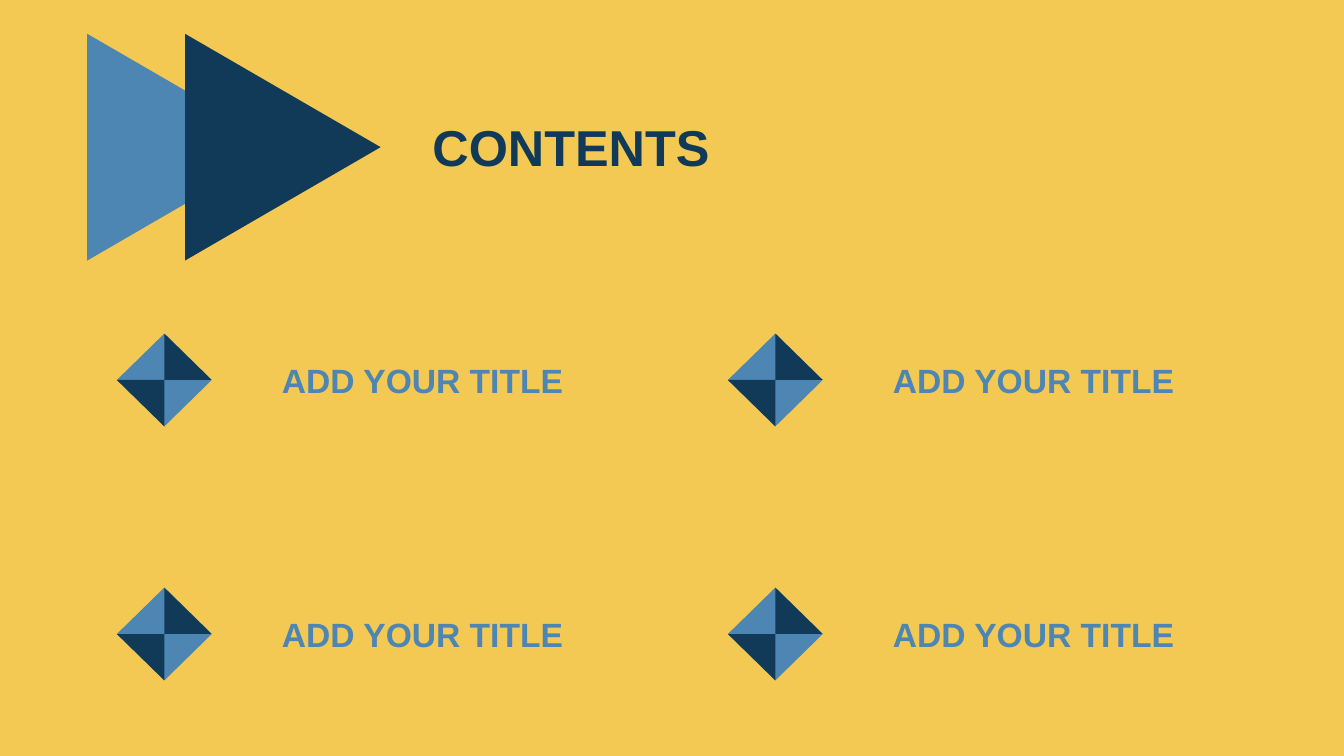
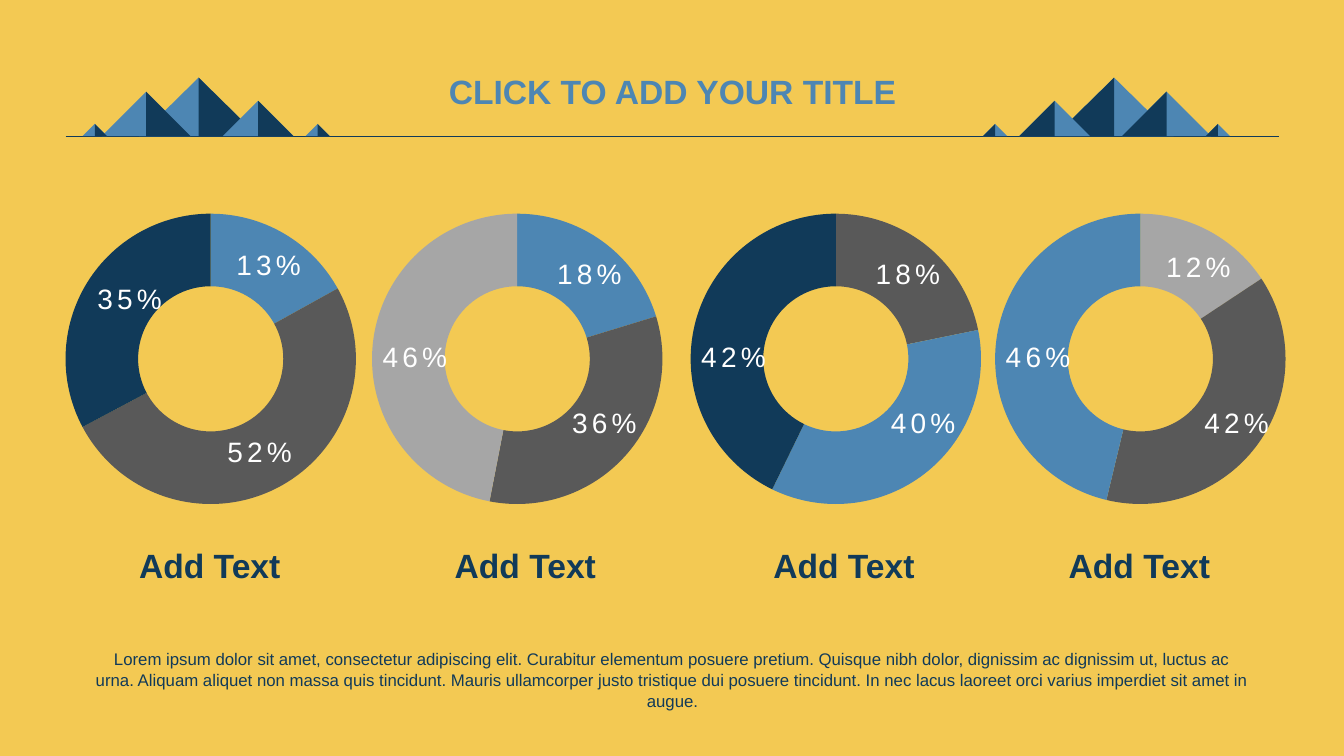
from itertools import product

from lxml.etree import SubElement
from pptx import Presentation
from pptx.dml.color import RGBColor
from pptx.enum.shapes import MSO_CONNECTOR, MSO_SHAPE
from pptx.enum.text import MSO_ANCHOR, PP_ALIGN
from pptx.oxml.ns import qn
from pptx.util import Inches, Pt

COLORS = {
    "background": "F3C953",
    "blue": "4D86B3",
    "navy": "113A59",
    "charcoal": "595959",
    "silver": "A6A6A6",
    "white": "FFFFFF",
}
FONT = "Arial"
WIDTH, HEIGHT = 13.33, 7.5
RING_RADIUS = 1.44
RING_THICKNESS = 0.25
LOREM = (
    "Lorem ipsum dolor sit amet, consectetur adipiscing elit. Curabitur elementum "
    "posuere pretium. Quisque nibh dolor, dignissim ac dignissim ut, luctus ac urna. "
    "Aliquam aliquet non massa quis tincidunt. Mauris ullamcorper justo tristique dui "
    "posuere tincidunt. In nec lacus laoreet orci varius imperdiet sit amet in augue."
)

# Each mountain: offset from the range's middle, half width, height.
MOUNTAINS = [
    (0, 0.59, 0.58),
    (0.59, 0.35, 0.35),
    (-0.52, 0.44, 0.44),
    (1.18, 0.12, 0.12),
    (-1.03, 0.12, 0.12),
]

# Each ring: centre, caption offset, then segments of
# label, colour, end angle and label offset from the centre.
RINGS = [
    (2.09, 0, [
        ("13%", "blue", 61, (0.57, -0.93)),
        ("52%", "charcoal", 242, (0.48, 0.92)),
        ("35%", "navy", 360, (-0.81, -0.6)),
    ]),
    (5.13, 0.09, [
        ("18%", "blue", 73, (0.71, -0.84)),
        ("36%", "charcoal", 191, (0.86, 0.63)),
        ("46%", "silver", 360, (-1.02, -0.02)),
    ]),
    (8.29, 0.09, [
        ("18%", "charcoal", 78.5, (0.71, -0.84)),
        ("40%", "blue", 206, (0.86, 0.63)),
        ("42%", "navy", 360, (-1.02, -0.02)),
    ]),
    (11.31, 0, [
        ("12%", "silver", 56.5, (0.57, -0.91)),
        ("42%", "charcoal", 193.5, (0.95, 0.63)),
        ("46%", "blue", 360, (-1.02, -0.02)),
    ]),
]


def color(name):
    """Return the named theme colour."""
    return RGBColor.from_string(COLORS[name])


def paint(shape, fill):
    """Give a shape a plain fill without outline or shadow."""
    shape.shadow.inherit = False
    shape.fill.solid()
    shape.fill.fore_color.rgb = color(fill)
    shape.line.fill.background()


def add_preset(shapes, preset, left, top, width, height, fill):
    """Add a painted preset shape."""
    shape = shapes.add_shape(
        preset, Inches(left), Inches(top), Inches(width), Inches(height))
    paint(shape, fill)
    return shape


def add_text(slide, text, left, top, width, height, size, fill,
             bold=False, align=PP_ALIGN.CENTER, wrap=False, spacing=0):
    """Add a one-paragraph text box and return its paragraph."""
    box = slide.shapes.add_textbox(
        Inches(left), Inches(top), Inches(width), Inches(height))
    frame = box.text_frame
    frame.word_wrap = wrap
    frame.vertical_anchor = MSO_ANCHOR.TOP
    paragraph = frame.paragraphs[0]
    paragraph.text = text
    paragraph.alignment = align
    font = paragraph.font
    font.name, font.size, font.bold = FONT, Pt(size), bold
    font.color.rgb = color(fill)
    if spacing:
        paragraph.runs[0]._r.get_or_add_rPr().set("spc", str(spacing * 100))
    return paragraph


def add_heading(slide, text, left, center, width):
    """Add a blue heading centred on a height."""
    add_text(slide, text, left, center - 0.25, width, 0.5, 24, "blue", bold=True)


def add_peak(shapes, center, tip, base, half_width, dark_side):
    """Draw a blue triangle with one navy half; dark_side is -1 or 1."""
    triangle = add_preset(
        shapes, MSO_SHAPE.ISOSCELES_TRIANGLE, center - half_width,
        min(tip, base), 2 * half_width, abs(base - tip), "blue")
    if tip > base:
        triangle.rotation = 180
    builder = shapes.build_freeform(Inches(center), Inches(tip))
    builder.add_line_segments([
        (Inches(center), Inches(base)),
        (Inches(center + dark_side * half_width), Inches(base)),
    ])
    paint(builder.convert_to_shape(), "navy")


def add_diamond(slide, center, middle, half_width=0.47, half_height=0.46):
    """Draw a four-part diamond from two opposite peaks."""
    shapes = slide.shapes.add_group_shape().shapes
    for direction in (1, -1):
        add_peak(shapes, center, middle - direction * half_height, middle,
                 half_width, direction)


def add_mountain_range(slide, center, base, direction):
    """Draw a group of mountains, mirrored when direction is -1."""
    shapes = slide.shapes.add_group_shape().shapes
    for offset, half_width, height in MOUNTAINS:
        add_peak(shapes, center + direction * offset, base - height, base,
                 half_width, direction)


def add_title_band(slide, title, left, base, width):
    """Draw a title above a rule that carries two mirrored ranges."""
    add_heading(slide, title, left, base - 0.45, width)
    rule = slide.shapes.add_connector(
        MSO_CONNECTOR.STRAIGHT, Inches(left), Inches(base),
        Inches(left + width), Inches(base))
    rule.line.color.rgb = color("navy")
    rule.line.width = Pt(0.5)
    SubElement(rule._element.spPr, qn("a:effectLst"))
    add_mountain_range(slide, left + width - 1.64, base, -1)
    add_mountain_range(slide, left + 1.32, base, 1)


def add_ring(slide, center, middle, caption_offset, segments):
    """Draw a ring of block arcs with its labels and caption."""
    start = 0
    for _, fill, end, _ in segments:
        arc = add_preset(
            slide.shapes, MSO_SHAPE.BLOCK_ARC, center - RING_RADIUS,
            middle - RING_RADIUS, 2 * RING_RADIUS, 2 * RING_RADIUS, fill)
        for index, angle in enumerate((start, end)):
            arc.adjustments[index] = (angle - 90) % 360 * 0.6
        arc.adjustments[2] = RING_THICKNESS
        start = end
    for label, _, _, (across, down) in segments:
        add_text(slide, label, center + across - 0.45, middle + down - 0.22,
                 0.91, 0.44, 20, "white", spacing=3)
    add_text(slide, "Add Text", center + caption_offset - 0.82, middle + 1.8,
             1.62, 0.5, 24, "navy", bold=True)


def build_contents(slide):
    """Build the contents slide with a grid of four entries."""
    for left, fill in ((0.71, "blue"), (1.68, "navy")):
        arrow = add_preset(slide.shapes, MSO_SHAPE.ISOSCELES_TRIANGLE,
                           left, 0.49, 2.25, 1.94, fill)
        arrow.rotation = 90
    add_text(slide, "CONTENTS", 4.19, 1.1, 5.9, 0.71, 36, "navy",
             bold=True, align=PP_ALIGN.LEFT, wrap=True)
    for center, middle in product((1.63, 7.69), (3.77, 6.29)):
        add_diamond(slide, center, middle)
        add_heading(slide, "ADD YOUR TITLE", center + 1.04, middle, 3.04)


def build_rings(slide):
    """Build the slide with four rings and a closing paragraph."""
    add_title_band(slide, "CLICK TO ADD YOUR TITLE", 0.65, 1.35, 12.04)
    for center, caption_offset, segments in RINGS:
        add_ring(slide, center, 3.56, caption_offset, segments)
    paragraph = add_text(slide, LOREM, 0.83, 6.37, 11.68, 0.89, 12, "navy", wrap=True)
    paragraph.line_spacing = 1.06


def main():
    """Create and save the presentation."""
    presentation = Presentation()
    presentation.slide_width = Inches(WIDTH)
    presentation.slide_height = Inches(HEIGHT)
    background = presentation.slide_master.background.fill
    background.solid()
    background.fore_color.rgb = color("background")
    for build in (build_contents, build_rings):
        build(presentation.slides.add_slide(presentation.slide_layouts[6]))
    presentation.save("out.pptx")


if __name__ == "__main__":
    main()
